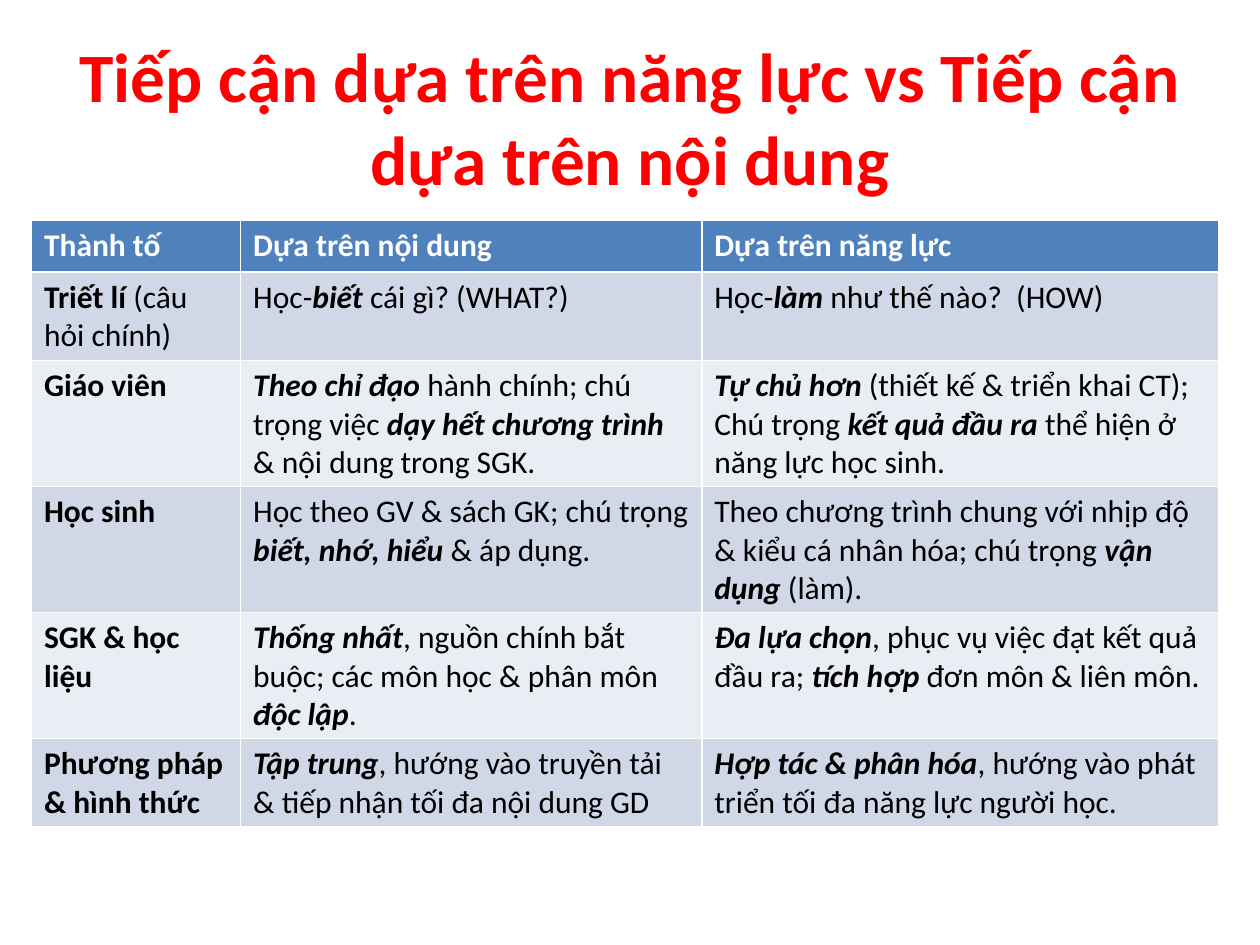
from pptx import Presentation, util as u
from pptx.dml.color import RGBColor
from pptx.enum import text

FONT = "Calibri"
TITLE = "Tiếp cận dựa trên năng lực vs Tiếp cận dựa trên nội dung"
HEADER = ("Thành tố", "Dựa trên nội dung", "Dựa trên năng lực")
# Asterisks enclose emphasised words.
ROWS = [
    ("*Triết lí *(câu hỏi chính)",
     "Học-*biết* cái gì? (WHAT?)",
     "Học-*làm* như thế nào?  (HOW)"),
    ("*Giáo viên*",
     "*Theo chỉ đạo *hành chính; chú trọng việc *dạy hết chương trình *& nội dung trong SGK.",
     "*Tự chủ hơn *(thiết kế & triển khai CT); Chú trọng *kết quả đầu ra *thể hiện ở năng lực học sinh."),
    ("*Học sinh*",
     "Học theo GV & sách GK; chú trọng *biết, nhớ, hiểu *& áp dụng.",
     "Theo chương trình chung với nhịp độ & kiểu cá nhân hóa; chú trọng *vận dụng *(làm)."),
    ("*SGK & học liệu*",
     "*Thống nhất*, nguồn chính bắt buộc; các môn học & phân môn *độc lập*.",
     "*Đa lựa chọn*, phục vụ việc đạt kết quả đầu ra; *tích hợp *đơn môn & liên môn."),
    ("*Phương pháp & hình thức*",
     "*Tập trung*, hướng vào truyền tải & tiếp nhận tối đa nội dung GD",
     "*Hợp tác & phân hóa*, hướng vào phát triển tối đa năng lực người học."),
]
COL_WIDTHS = (1.66, 3.66, 4.1)
ROW_HEIGHT = 0.41
HEADER_FILL, BANDS = "4F81BD", ("D0D8E8", "E9EDF4")


def rgb(value):
    return RGBColor.from_string(value)


def add_run(p, words, size, color, bold=False, italic=False):
    r = p.add_run()
    r.text = words
    f = r.font
    f.name, f.size, f.bold, f.italic = FONT, u.Pt(size), bold, italic
    f.color.rgb = rgb(color)


def add_title(slide):
    tf = slide.shapes.add_textbox(u.Inches(0.5), u.Inches(0.3), u.Inches(9), u.Inches(1.25)).text_frame
    tf.word_wrap = True
    tf.vertical_anchor = text.MSO_ANCHOR.MIDDLE
    p = tf.paragraphs[0]
    p.alignment = text.PP_ALIGN.CENTER
    add_run(p, TITLE, 39.6, "FF0000", bold=True)


def fill_cell(cell, words, row, col):
    header = row == 0
    cell.fill.solid()
    cell.fill.fore_color.rgb = rgb(HEADER_FILL if header else BANDS[(row - 1) % 2])
    p = cell.text_frame.paragraphs[0]
    for i, part in enumerate(words.split("*")):
        if part:
            strong = i % 2 == 1
            add_run(p, part, 18, "FFFFFF" if header else "000000",
                    bold=header or strong, italic=strong and col > 0)


def add_comparison(slide):
    rows = [HEADER] + ROWS
    table = slide.shapes.add_table(
        len(rows), len(HEADER), u.Inches(0.25), u.Inches(1.75),
        u.Inches(sum(COL_WIDTHS)), u.Inches(ROW_HEIGHT * len(rows))).table
    for column, width in zip(table.columns, COL_WIDTHS):
        column.width = u.Inches(width)
    for i, row in enumerate(rows):
        for j, words in enumerate(row):
            fill_cell(table.cell(i, j), words, i, j)


def main():
    prs = Presentation()
    prs.slide_width, prs.slide_height = u.Inches(10), u.Inches(7.5)
    slide = prs.slides.add_slide(prs.slide_layouts[6])
    add_title(slide)
    add_comparison(slide)
    prs.save("out.pptx")


if __name__ == "__main__":
    main()
